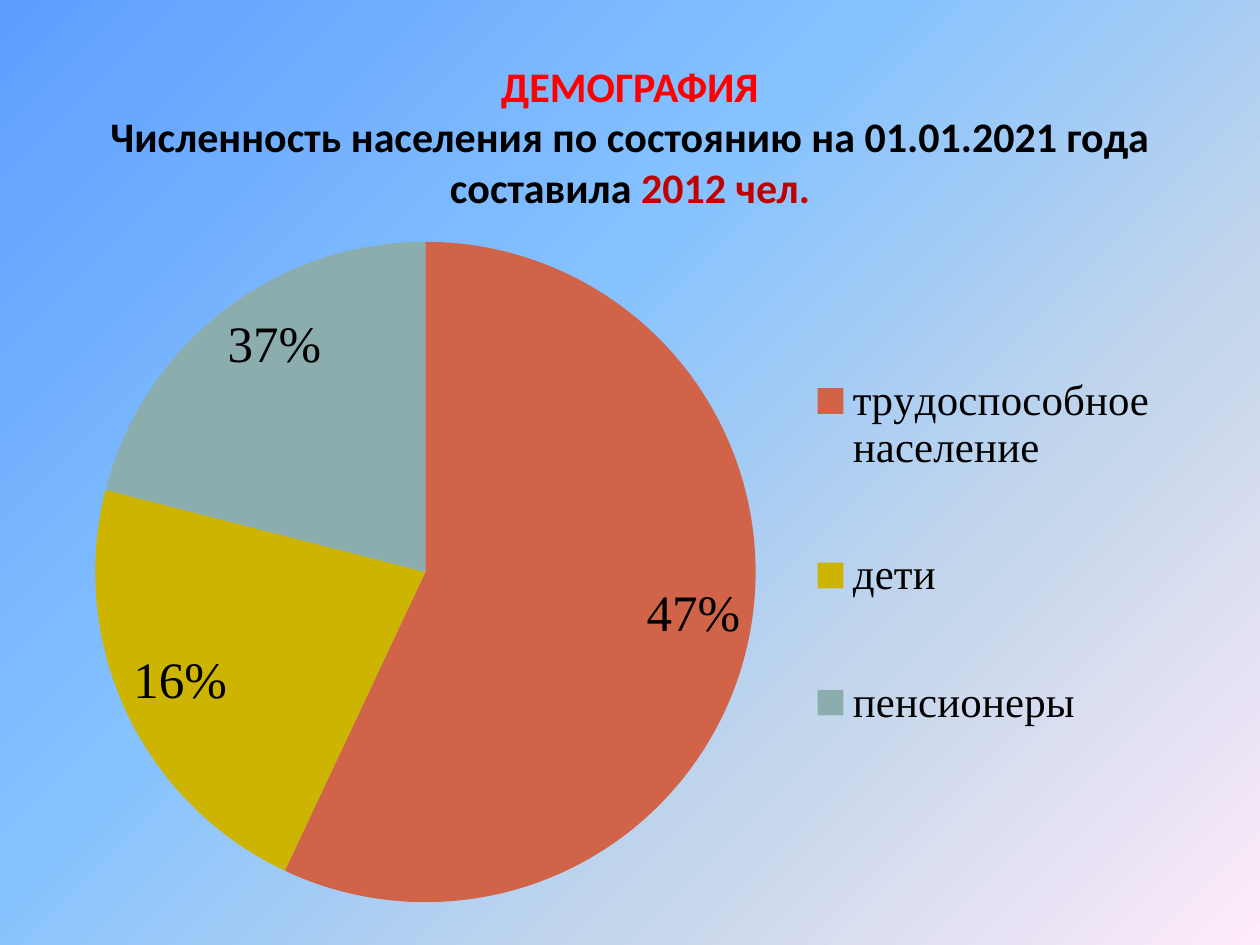
from typing import NamedTuple

from lxml import etree
from pptx import Presentation
from pptx.chart.data import CategoryChartData
from pptx.dml.color import RGBColor
from pptx.enum.chart import XL_CHART_TYPE, XL_LABEL_POSITION, XL_LEGEND_POSITION
from pptx.enum.text import MSO_ANCHOR, PP_ALIGN
from pptx.oxml import parse_xml
from pptx.oxml.ns import nsdecls, qn
from pptx.util import Inches, Pt

PIE = XL_CHART_TYPE.PIE
INSIDE_END = XL_LABEL_POSITION.INSIDE_END
LEGEND_RIGHT = XL_LEGEND_POSITION.RIGHT
MIDDLE = MSO_ANCHOR.MIDDLE
CENTER = PP_ALIGN.CENTER

TITLE_FONT = "Calibri"
CHART_FONT = "Times New Roman"
COLORS = {
    "black": "000000", "heading": "FF0000", "total": "C00000",
    "working": "D16349", "children": "CCB400", "retired": "8CADAE",
}
BACKGROUND_STOPS = [(0, "5E9EFF"), (40, "85C2FF"), (70, "C4D6EB"), (100, "FFEBFA")]


class Group(NamedTuple):
    name: str
    share: float
    label: str
    color: str


GROUPS = [
    Group("трудоспособное население", 0.57, "47%", "working"),
    Group("дети", 0.22, "16%", "children"),
    Group("пенсионеры", 0.21, "37%", "retired"),
]


def style_font(font, size: float, color: str = "black", name: str = CHART_FONT,
               bold: bool = False) -> None:
    font.name = name
    font.size = Pt(size)
    font.bold = bold
    font.color.rgb = RGBColor.from_string(COLORS[color])


def add_text(paragraph, text: str, **font_format) -> None:
    run = paragraph.add_run()
    run.text = text
    style_font(run.font, **font_format)


def set_background(slide) -> None:
    fill = slide.background.fill
    fill.gradient()
    fill.gradient_angle = 315  # counter-clockwise: top left to bottom right
    stops = slide.background._cSld.find(".//" + qn("a:gsLst"))
    for stop in list(stops):
        stops.remove(stop)
    for position, color in BACKGROUND_STOPS:
        stops.append(parse_xml(
            f'<a:gs {nsdecls("a")} pos="{position * 1000}">'
            f'<a:srgbClr val="{color}"/></a:gs>'))


def add_title(slide) -> None:
    box = slide.shapes.add_textbox(Inches(0.5), Inches(0.3), Inches(9), Inches(1.56))
    frame = box.text_frame
    frame.word_wrap = True
    frame.vertical_anchor = MIDDLE
    paragraph = frame.paragraphs[0]
    paragraph.alignment = CENTER
    title_format = {"size": 24, "name": TITLE_FONT, "bold": True}
    add_text(paragraph, "ДЕМОГРАФИЯ", color="heading", **title_format)
    paragraph.add_line_break()
    add_text(paragraph, "Численность населения по состоянию на 01.01.2021 года составила ",
             **title_format)
    add_text(paragraph, "2012 чел.", color="total", **title_format)


def make_layout(x: float, y: float, w: float, h: float, inner: bool = False):
    """Manual chart layout, in fractions of the chart area."""
    layout = etree.Element(qn("c:layout"))
    manual = etree.SubElement(layout, qn("c:manualLayout"))
    settings = [("layoutTarget", "inner")] if inner else []
    settings += [("xMode", "edge"), ("yMode", "edge"),
                 ("x", x), ("y", y), ("w", w), ("h", h)]
    for tag, value in settings:
        etree.SubElement(manual, qn(f"c:{tag}")).set("val", str(value))
    return layout


def place_part(part, layout, after: str = "") -> None:
    for old_layout in part.findall(qn("c:layout")):
        part.remove(old_layout)
    if after:
        part.find(qn(after)).addnext(layout)
    else:
        part.insert(0, layout)


def add_population_chart(slide) -> None:
    data = CategoryChartData(number_format="0%")
    data.categories = [group.name for group in GROUPS]
    data.add_series("Series 1", [group.share for group in GROUPS])
    chart = slide.shapes.add_chart(
        PIE, Inches(0.47), Inches(1.72), Inches(9.53), Inches(6.41), data).chart
    chart.has_title = False
    style_font(chart.font, 10)

    # Legend and plot area
    chart.has_legend = True
    legend = chart.legend
    legend.position = LEGEND_RIGHT
    legend.include_in_layout = False
    style_font(legend.font, 24.5)
    place_part(legend._element, make_layout(0.62, 0.1, 0.3, 0.63), "c:legendPos")
    plot_area = chart._chartSpace.chart.plotArea
    place_part(plot_area, make_layout(0.03, 0.03, 0.55, 0.82, inner=True))

    # Slices and their labels
    plot = chart.plots[0]
    plot.vary_by_categories = True
    series = plot.series[0]
    labels = series.data_labels
    labels.show_value = True
    labels.number_format = "0%"
    labels.number_format_is_linked = False
    labels.position = INSIDE_END
    style_font(labels.font, 29.2)
    for index, group in enumerate(GROUPS):
        point = series.points[index]
        point.format.fill.solid()
        point.format.fill.fore_color.rgb = RGBColor.from_string(COLORS[group.color])
        point.format.line.fill.background()
        label = point.data_label
        add_text(label.text_frame.paragraphs[0], group.label, size=29.2)
        label.position = INSIDE_END


def main() -> None:
    presentation = Presentation()
    presentation.slide_width = Inches(10)
    presentation.slide_height = Inches(7.5)
    slide = presentation.slides.add_slide(presentation.slide_layouts[6])
    set_background(slide)
    add_title(slide)
    add_population_chart(slide)
    presentation.save("out.pptx")


if __name__ == "__main__":
    main()
